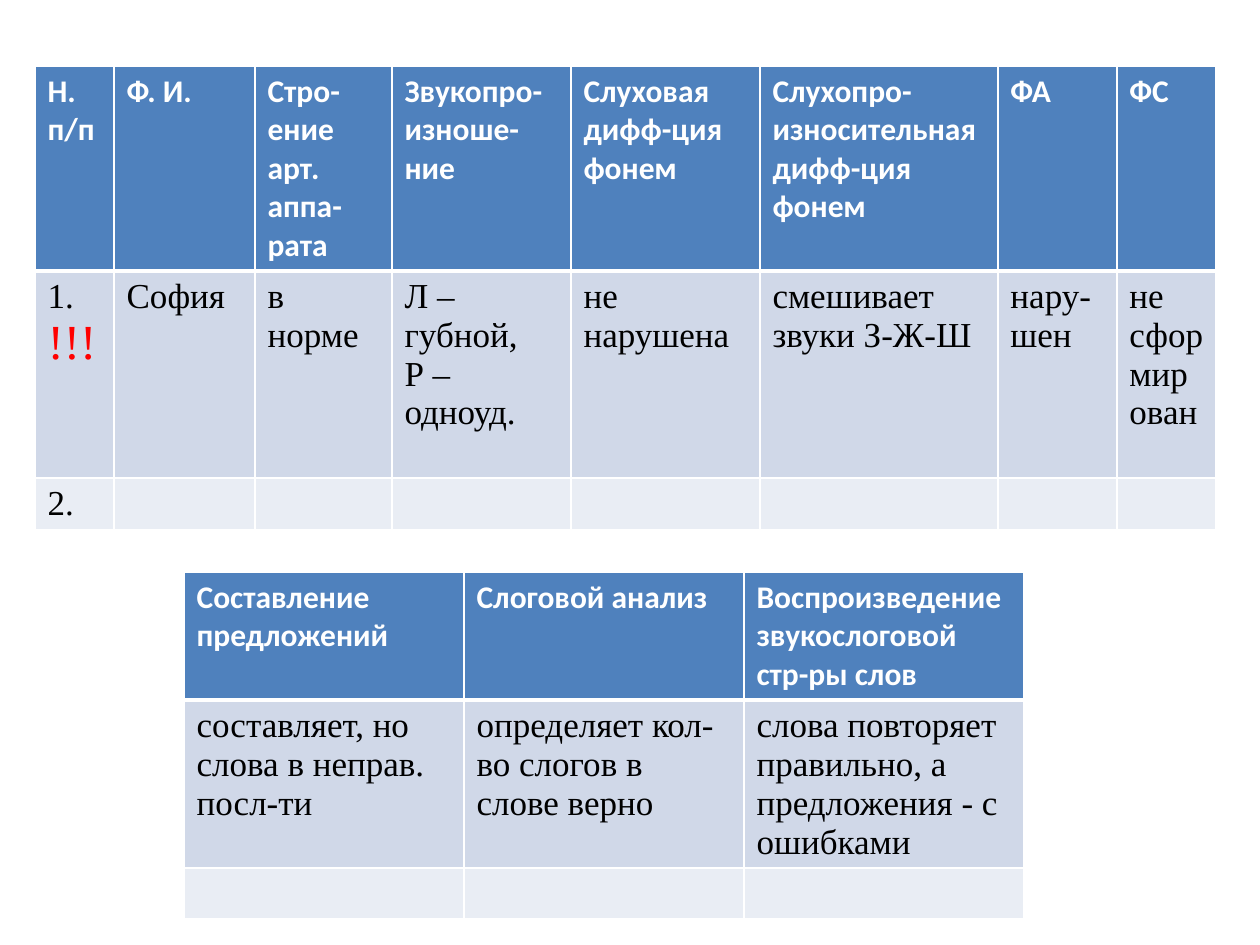
from lxml import etree
from pptx import Presentation
from pptx.dml.color import RGBColor
from pptx.oxml.ns import qn
from pptx.util import Emu, Pt

PX = 914400 / 126
WHITE = RGBColor(0xFF, 0xFF, 0xFF)
BLACK = RGBColor(0, 0, 0)
RED = RGBColor(0xFF, 0, 0)
ROW_FILLS = [RGBColor(0x4F, 0x81, 0xBD), RGBColor(0xD0, 0xD8, 0xE8), RGBColor(0xE9, 0xED, 0xF4)]

HEAD = {"name": "Calibri", "size": Pt(18), "bold": True}
BODY = {"name": "Times New Roman", "size": Pt(20), "bold": False}
ALERT = {"name": "Times New Roman", "size": Pt(28), "bold": False}
ALERT_TEXT = "!!!"

# Each line break in a cell starts a new paragraph
TABLES = [
    {
        "at": (35, 66),
        "cols": [79, 141, 137, 179, 189, 238, 119, 99],
        "heights": [204, 207, 51],
        "rows": [
            ["Н.\nп/п", "Ф. И.", "Стро-ение арт. аппа-рата", "Звукопро-изноше-ние",
             "Слуховая\nдифф-ция\nфонем", "Слухопро-\nизносительная\nдифф-ция\nфонем", "ФА", "ФС"],
            ["1.\n" + ALERT_TEXT, "София", "в норме", "Л – губной,\nР – одноуд.", "не нарушена",
             "смешивает звуки З-Ж-Ш", "нару-шен", "не сформирован"],
            ["2.", "", "", "", "", "", "", ""],
        ],
    },
    {
        "at": (184, 572),
        "cols": [280, 280, 280],
        "heights": [127, 168, 51],
        "rows": [
            ["Составление предложений", "Слоговой анализ", "Воспроизведение звукослоговой стр-ры слов"],
            ["составляет, но слова в неправ. посл-ти", "определяет кол-во слогов в слове верно",
             "слова повторяет правильно, а предложения - с ошибками"],
            ["", "", ""],
        ],
    },
]


def px(n):
    return Emu(round(n * PX))


def set_borders(cell, widths):
    tc_pr = cell._tc.get_or_add_tcPr()
    for side, width in zip("LRTB", widths):
        ln = etree.SubElement(tc_pr, qn(f"a:ln{side}"), w=str(Pt(width)))
        fill = etree.SubElement(ln, qn("a:solidFill"))
        etree.SubElement(fill, qn("a:srgbClr"), val=str(WHITE))


def write_cell(cell, text, row):
    # White grid with a thicker rule under the header
    set_borders(cell, (1, 1, 3 if row == 1 else 1, 3 if row == 0 else 1))
    cell.fill.solid()
    cell.fill.fore_color.rgb = ROW_FILLS[row]
    if not text:
        return
    tf = cell.text_frame
    tf.text = text
    for p in tf.paragraphs:
        alert = p.text == ALERT_TEXT
        style = HEAD if row == 0 else ALERT if alert else BODY
        font = p.runs[0].font
        for key, value in style.items():
            setattr(font, key, value)
        font.color.rgb = WHITE if row == 0 else RED if alert else BLACK


def add_table(s, data):
    cols, heights, rows = data["cols"], data["heights"], data["rows"]
    left, top = data["at"]
    table = s.shapes.add_table(len(rows), len(cols), px(left), px(top),
                               px(sum(cols)), px(sum(heights))).table
    for column, width in zip(table.columns, cols):
        column.width = px(width)
    for r, (height, texts) in enumerate(zip(heights, rows)):
        table.rows[r].height = px(height)
        for c, text in enumerate(texts):
            write_cell(table.cell(r, c), text, r)


def main():
    prs = Presentation()
    prs.slide_width, prs.slide_height = px(1260), px(945)
    s = prs.slides.add_slide(prs.slide_layouts[6])
    for data in TABLES:
        add_table(s, data)
    prs.save("out.pptx")


if __name__ == "__main__":
    main()
